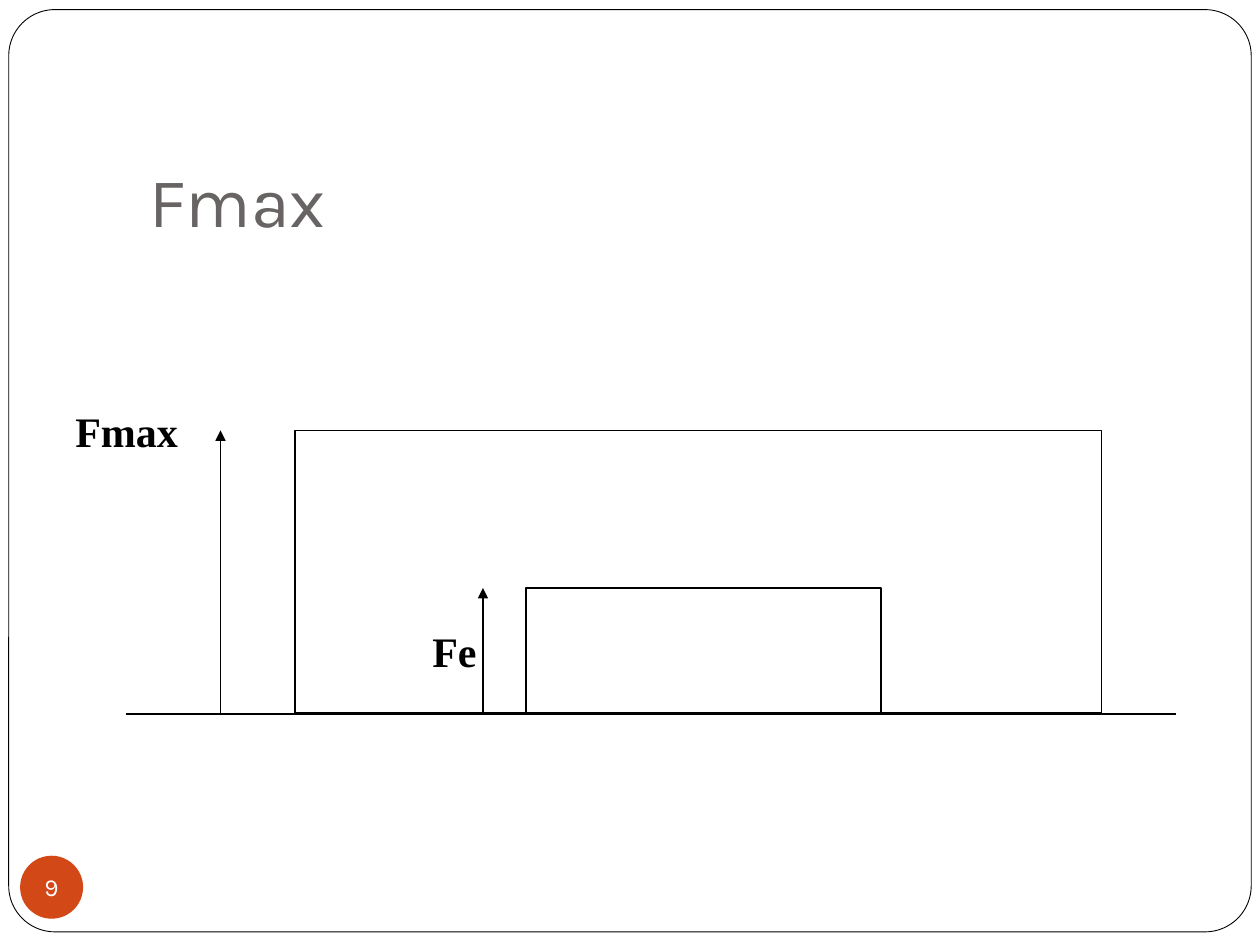
import pptx
import pptx.util
import pptx.dml.color
import pptx.enum.shapes
import pptx.enum.text
import pptx.oxml.ns
import lxml.etree

Pt = pptx.util.Pt
SHAPE = pptx.enum.shapes.MSO_SHAPE
ANCHOR = pptx.enum.text.MSO_ANCHOR
ALIGN = pptx.enum.text.PP_ALIGN
COLORS = {"ink": "000000", "paper": "FFFFFF", "title": "696464", "badge": "D34817"}
BASELINE = 408


def rgb(name):
    return pptx.dml.color.RGBColor.from_string(COLORS[name])


def add_run(p, text, font, size, color, bold=False):
    r = p.add_run()
    r.text = text
    r.font.name = font
    r.font.size = Pt(size)
    r.font.bold = bold
    r.font.color.rgb = rgb(color)


def set_insets(tf, left, top, right, bottom):
    tf.margin_left, tf.margin_top = Pt(left), Pt(top)
    tf.margin_right, tf.margin_bottom = Pt(right), Pt(bottom)


def add_box(s, kind, box, fill=None, line=None, width=1):
    sp = s.shapes.add_shape(kind, *map(Pt, box))
    sp.shadow.inherit = False
    if fill:
        sp.fill.solid()
        sp.fill.fore_color.rgb = rgb(fill)
    else:
        sp.fill.background()
    if line:
        sp.line.color.rgb = rgb(line)
        sp.line.width = Pt(width)
    else:
        sp.line.fill.background()
    return sp


def add_line(s, x1, y1, x2, y2, arrow=False):
    c = s.shapes.add_connector(
        pptx.enum.shapes.MSO_CONNECTOR.STRAIGHT, Pt(x1), Pt(y1), Pt(x2), Pt(y2))
    c.line.color.rgb = rgb("ink")
    c.line.width = Pt(1)
    qn = pptx.oxml.ns.qn
    if arrow:
        lxml.etree.SubElement(c.line._get_or_add_ln(), qn("a:headEnd"), type="triangle")
    lxml.etree.SubElement(c.element.spPr, qn("a:effectLst"))


def add_title(s, box, text):
    sp = s.shapes.title
    sp.left, sp.top, sp.width, sp.height = map(Pt, box)
    tf = sp.text_frame
    tf.vertical_anchor = ANCHOR.BOTTOM
    set_insets(tf, 7.2, 3.6, 7.2, 7.2)
    p = tf.paragraphs[0]
    p.alignment = ALIGN.LEFT
    add_run(p, text, "Karla", 40, "title")


def add_frame(s, box):
    sp = add_box(s, SHAPE.ROUNDED_RECTANGLE, box, "paper", "ink", 0.5)
    sp.adjustments[0] = 0.05
    s.shapes.title.element.addprevious(sp.element)


def add_label(s, box, text):
    tf = s.shapes.add_textbox(*map(Pt, box)).text_frame
    tf.word_wrap = True
    set_insets(tf, 7.2, 3.6, 7.2, 3.6)
    add_run(tf.paragraphs[0], text, "Times New Roman", 24, "ink", True)


def add_band(s, box, arrow_x, label, label_box):
    add_box(s, SHAPE.RECTANGLE, box, line="ink")
    add_label(s, label_box, label)
    add_line(s, arrow_x, box[1], arrow_x, BASELINE, arrow=True)


def add_diagram(s, left, right):
    add_line(s, left, BASELINE, right, BASELINE)
    for x, top, width, arrow_x, label, label_box in (
            (168.5, 246, 461, 126, "Fmax", (36, 228, 127, 36)),
            (300.5, 336, 203, 276, "Fe", (240, 354, 55, 36))):
        add_band(s, (x, top, width, BASELINE - 0.5 - top), arrow_x, label, label_box)


def add_page_number(s, box, number):
    tf = add_box(s, SHAPE.OVAL, box, "badge").text_frame
    tf.word_wrap = False
    tf.vertical_anchor = ANCHOR.MIDDLE
    set_insets(tf, 0, 0, 0, 0)
    p = tf.paragraphs[0]
    p.alignment = ALIGN.CENTER
    add_run(p, number, "Karla", 14, "paper")


def main():
    prs = pptx.Presentation()
    prs.slide_width, prs.slide_height = Pt(720), Pt(540)
    s = prs.slides.add_slide(prs.slide_layouts[5])
    add_frame(s, (5, 5.5, 710, 527))
    add_title(s, (78, 54, 612, 91.5), "Fmax")
    add_diagram(s, 72, 672)
    add_page_number(s, (11.5, 489, 36, 36), "9")
    prs.save("out.pptx")


if __name__ == "__main__":
    main()
